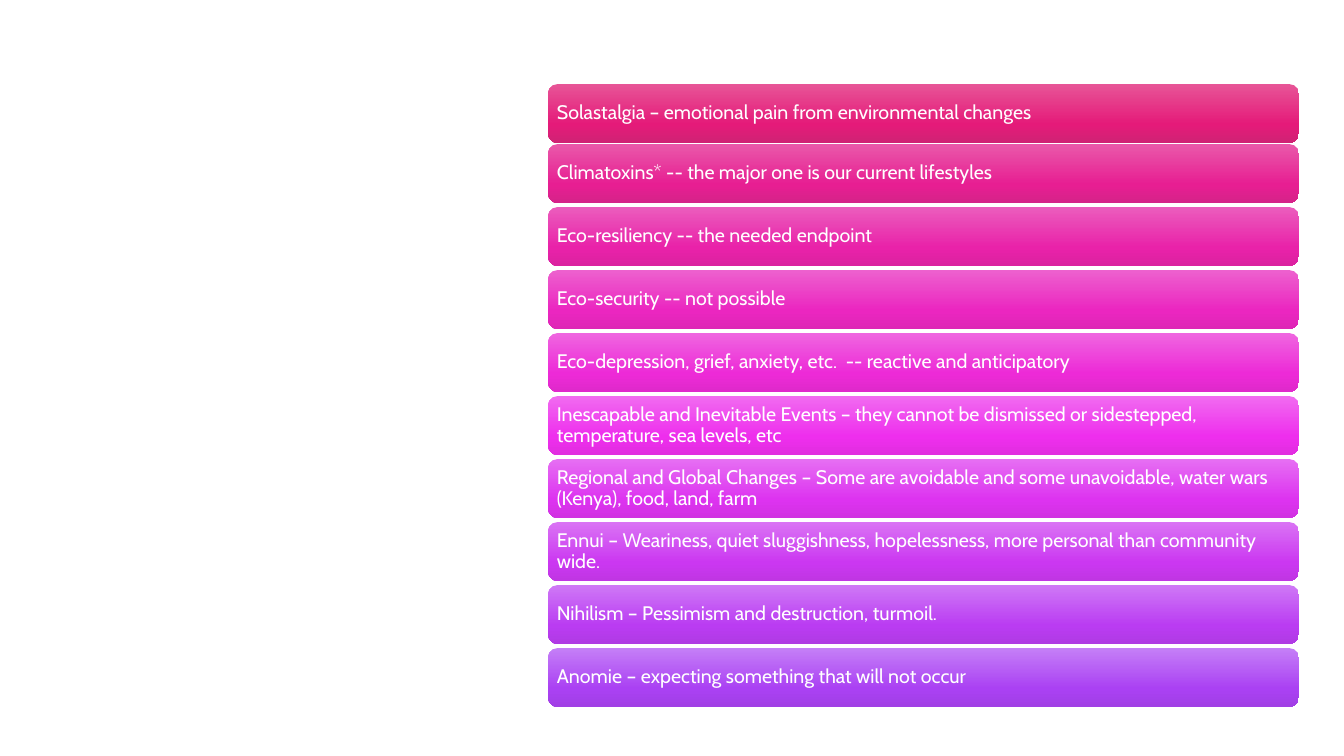
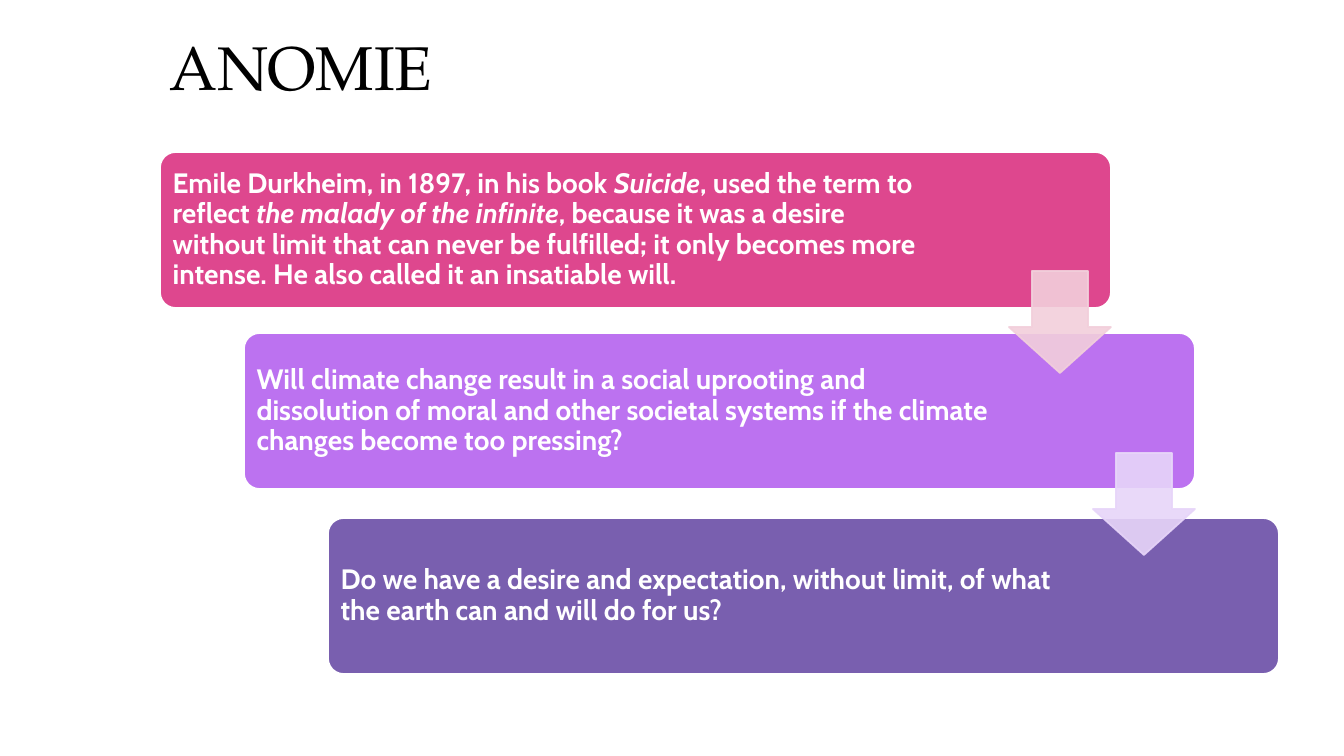
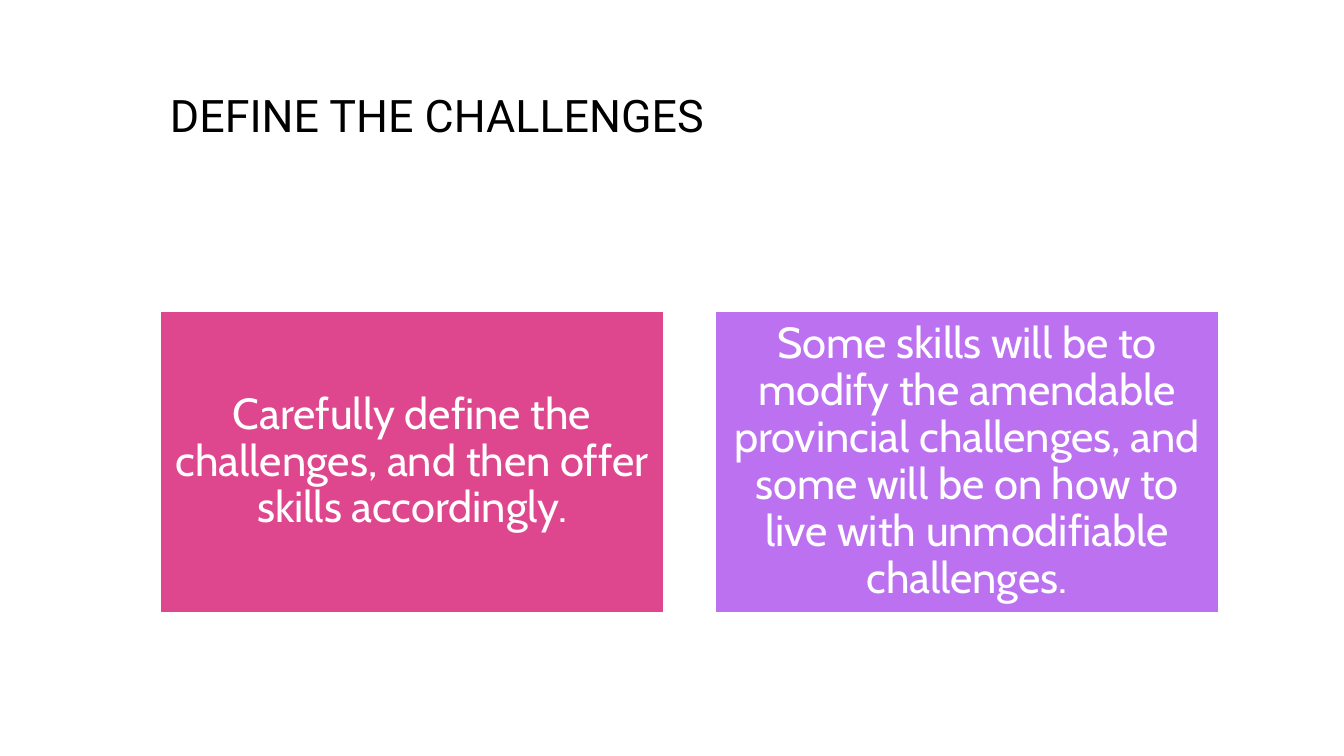
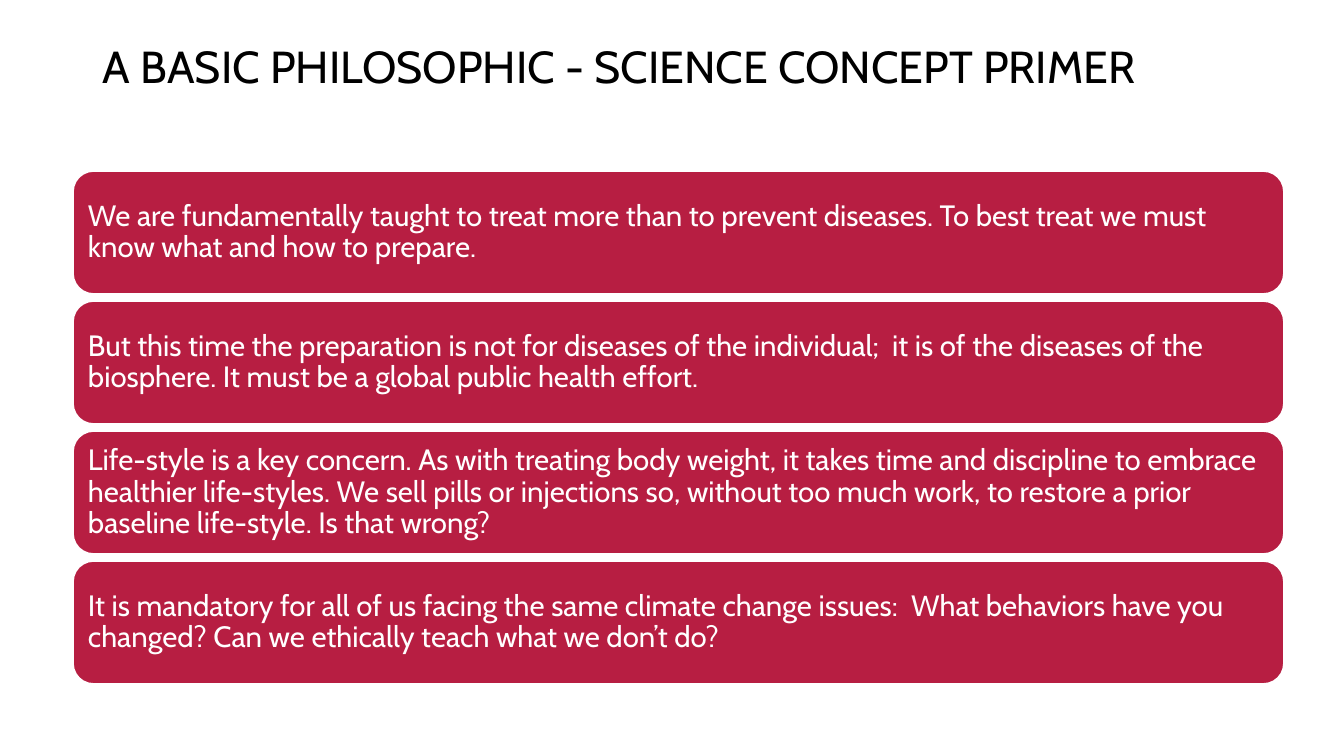
from copy import deepcopy
from dataclasses import dataclass

from pptx import Presentation
from pptx import util as u
from pptx.dml.color import RGBColor
from pptx.enum import shapes, text
from pptx.oxml.ns import qn
from pptx.oxml.xmlchemy import OxmlElement

SLIDE_W, SLIDE_H = 1344, 756
EMU_PER_PX = u.Inches(1) / 100.8
LINE_SPACING = 0.9

ROUNDED = shapes.MSO_SHAPE.ROUNDED_RECTANGLE
RECTANGLE = shapes.MSO_SHAPE.RECTANGLE
LEFT, CENTER = text.PP_ALIGN.LEFT, text.PP_ALIGN.CENTER


@dataclass(frozen=True)
class Theme:
    white: str = "FFFFFF"
    black: str = "000000"
    pink: str = "DE478E"
    lilac: str = "BC72F0"
    violet: str = "795FAF"
    crimson: str = "B71E42"
    pale_pink: str = "F2CFDB"
    pale_lilac: str = "E7D5F9"
    body_font: str = "Cabin"
    serif_font: str = "TeX Gyre Pagella"
    sans_font: str = "Roboto"
    big_title: int = 44
    title: int = 32
    callout: int = 31
    statement: int = 21
    step: int = 20
    term: int = 14
    outline: float = 1.25
    arrow_opacity: int = 90


THEME = Theme()


@dataclass(frozen=True)
class Box:
    left: int
    top: int
    width: int
    height: int

    def emu(self) -> tuple[int, ...]:
        return tuple(px(n) for n in (self.left, self.top, self.width, self.height))


@dataclass(frozen=True)
class PanelStyle:
    size: int
    inset: int
    kind: int = ROUNDED
    corner: float | None = None
    bold: bool = False
    align: int = LEFT
    outlined: bool = True


@dataclass(frozen=True)
class Term:
    wording: str
    shades: tuple[str, str, str]


@dataclass(frozen=True)
class Step:
    runs: tuple[str, ...]
    top: int
    color: str
    right_inset: int


@dataclass(frozen=True)
class Callout:
    wording: str
    color: str


TERM_STYLE = PanelStyle(THEME.term, 6, outlined=False)
STEP_STYLE = PanelStyle(THEME.step, 8, corner=0.1, bold=True)
CALLOUT_STYLE = PanelStyle(THEME.callout, 13, kind=RECTANGLE, align=CENTER)
STATEMENT_STYLE = PanelStyle(THEME.statement, 9)

SHADE_POSITIONS = (0, 0.69, 1)

TERMS = (
    Term("Solastalgia – emotional pain from environmental changes", ("E75597", "E51A79", "CF2374")),
    Term("Climatoxins* -- the major one is our current lifestyles", ("E959AA", "E71E92", "D52389")),
    Term("Eco-resiliency -- the needed endpoint", ("EB5DBD", "E922A9", "DB22A0")),
    Term("Eco-security -- not possible", ("ED61CE", "EB26C0", "DE25B6")),
    Term("Eco-depression, grief, anxiety, etc.  -- reactive and anticipatory",
         ("EF66E0", "ED2AD7", "DF29CB")),
    Term("Inescapable and Inevitable Events – they cannot be dismissed or sidestepped, "
         "temperature, sea levels, etc", ("F16BF0", "EE2EED", "E12DE0")),
    Term("Regional and Global Changes – Some are avoidable and some unavoidable, water wars "
         "(Kenya), food, land, farm", ("E66FF3", "DD33F0", "D131E2")),
    Term("Ennui – Weariness, quiet sluggishness, hopelessness, more personal than community wide.",
         ("DA74F4", "CB37F1", "C036E3")),
    Term("Nihilism – Pessimism and destruction, turmoil.", ("CF79F6", "BA3CF2", "B03AE4")),
    Term("Anomie – expecting something that will not occur", ("C57FF7", "AA41F3", "A13FE5")),
)

STEPS = (
    Step(("Emile Durkheim, in 1897, in his book ", "Suicide", ", used the term to reflect ",
          "the malady of the infinite",
          ", because it was a desire without limit that can never be fulfilled; it only becomes "
          "more intense. He also called it an insatiable will."), 152, THEME.pink, 169),
    Step(("Will climate change result in a social uprooting and dissolution of moral and other "
          "societal systems if the climate changes become too pressing?",),
         333, THEME.lilac, 194),
    Step(("Do we have a desire and expectation, without limit, of what the earth can and will "
          "do for us?",), 518, THEME.violet, 194),
)

CALLOUTS = (
    Callout("Carefully define the challenges, and then offer skills accordingly.", THEME.pink),
    Callout("Some skills will be to modify the amendable provincial challenges, and some will "
            "be on how to live with unmodifiable challenges.", THEME.lilac),
)

STATEMENTS = (
    "We are fundamentally taught to treat more than to prevent diseases. To best treat we must "
    "know what and how to prepare.",
    "But this time the preparation is not for diseases of the individual;  it is of the "
    "diseases of the biosphere. It must be a global public health effort.",
    "Life-style is a key concern. As with treating body weight, it takes time and discipline to "
    "embrace healthier life-styles. We sell pills or injections so, without too much work, to "
    "restore a prior baseline life-style. Is that wrong?",
    "It is mandatory for all of us facing the same climate change issues:  What behaviors have "
    "you changed? Can we ethically teach what we don’t do?",
)


def px(length: int) -> int:
    return round(length * EMU_PER_PX)


def rgb(color: str) -> RGBColor:
    return RGBColor.from_string(color)


def new_slide(deck):
    slide = deck.slides.add_slide(deck.slide_layouts[6])
    slide.background.fill.solid()
    slide.background.fill.fore_color.rgb = rgb(THEME.white)
    return slide


def set_font(paragraph, name: str, size: int, color: str, bold: bool = False) -> None:
    paragraph.line_spacing = LINE_SPACING
    font = paragraph.font
    font.name, font.size, font.bold = name, u.Pt(size), bold
    font.color.rgb = rgb(color)


def add_title(slide, box: Box, wording: str, font: str, size: int) -> None:
    frame = slide.shapes.add_textbox(*box.emu()).text_frame
    frame.word_wrap = True
    frame.text = wording
    set_font(frame.paragraphs[0], font, size, THEME.black)


def add_panel(slide, box: Box, style: PanelStyle, color: str, *runs: str,
              right_inset: int | None = None):
    """Draw a filled panel with its text; every second run is italic."""
    panel = slide.shapes.add_shape(style.kind, *box.emu())
    panel.shadow.inherit = False
    if style.corner is not None:
        panel.adjustments[0] = style.corner
    panel.fill.solid()
    panel.fill.fore_color.rgb = rgb(color)
    if style.outlined:
        panel.line.color.rgb = rgb(THEME.white)
        panel.line.width = u.Pt(THEME.outline)
    else:
        panel.line.fill.background()

    frame = panel.text_frame
    frame.word_wrap = True
    frame.vertical_anchor = text.MSO_ANCHOR.MIDDLE
    frame.margin_left = frame.margin_top = frame.margin_bottom = px(style.inset)
    frame.margin_right = px(style.inset if right_inset is None else right_inset)
    paragraph = frame.paragraphs[0]
    paragraph.alignment = style.align
    set_font(paragraph, THEME.body_font, style.size, THEME.white, style.bold)
    for index, wording in enumerate(runs):
        run = paragraph.add_run()
        run.text = wording
        if index % 2:
            run.font.italic = True
    return panel


def shade_downward(panel, shades: tuple[str, ...]) -> None:
    """Fill the panel with a top-to-bottom gradient of three shades."""
    fill = panel.fill
    fill.gradient()
    fill.gradient_angle = 270
    stop_list = panel.element.spPr.find(".//" + qn("a:gsLst"))
    stop_list.append(deepcopy(stop_list[-1]))
    for stop, shade, position in zip(fill.gradient_stops, shades, SHADE_POSITIONS):
        stop.color.rgb = rgb(shade)
        stop.position = position


def add_down_arrow(slide, box: Box, color: str) -> None:
    arrow = slide.shapes.add_shape(shapes.MSO_SHAPE.DOWN_ARROW, *box.emu())
    arrow.shadow.inherit = False
    arrow.adjustments[0], arrow.adjustments[1] = 0.55, 0.45
    arrow.fill.solid()
    arrow.fill.fore_color.rgb = rgb(color)
    arrow.line.color.rgb = rgb(color)
    arrow.line.width = u.Pt(THEME.outline)
    for color_element in arrow.element.spPr.iter(qn("a:srgbClr")):
        alpha = OxmlElement("a:alpha")
        alpha.set("val", str(THEME.arrow_opacity * 1000))
        color_element.append(alpha)


def build_terms(deck) -> None:
    slide = new_slide(deck)
    first_top, second_top, pitch = 84, 144, 63
    for row, term in enumerate(TERMS):
        top = second_top + (row - 1) * pitch if row else first_top
        panel = add_panel(slide, Box(548, top, 751, 59), TERM_STYLE, term.shades[1], term.wording)
        shade_downward(panel, term.shades)


def build_anomie(deck) -> None:
    slide = new_slide(deck)
    indent = 84
    add_title(slide, Box(160, 32, 1058, 83), "ANOMIE", THEME.serif_font, THEME.big_title)
    for index, step in enumerate(STEPS):
        add_panel(slide, Box(160 + index * indent, step.top, 951, 156), STEP_STYLE, step.color,
                  *step.runs, right_inset=step.right_inset)
    for index, color in enumerate((THEME.pale_pink, THEME.pale_lilac)):
        add_down_arrow(slide, Box(1009 + index * indent, 271 + index * 182, 102, 102), color)


def build_challenges(deck) -> None:
    slide = new_slide(deck)
    add_title(slide, Box(160, 89, 1058, 116), "DEFINE THE CHALLENGES",
              THEME.sans_font, THEME.title)
    for column, callout in enumerate(CALLOUTS):
        add_panel(slide, Box(160 + column * 555, 311, 504, 302), CALLOUT_STYLE,
                  callout.color, callout.wording)


def build_primer(deck) -> None:
    slide = new_slide(deck)
    add_title(slide, Box(93, 40, 1159, 113), "A BASIC PHILOSOPHIC - SCIENCE CONCEPT PRIMER",
              THEME.body_font, THEME.title)
    for row, statement in enumerate(STATEMENTS):
        add_panel(slide, Box(73, 171 + row * 130, 1211, 123), STATEMENT_STYLE,
                  THEME.crimson, statement)


def main() -> None:
    deck = Presentation()
    deck.slide_width, deck.slide_height = px(SLIDE_W), px(SLIDE_H)
    for build in (build_terms, build_anomie, build_challenges, build_primer):
        build(deck)
    deck.save("out.pptx")


if __name__ == "__main__":
    main()
